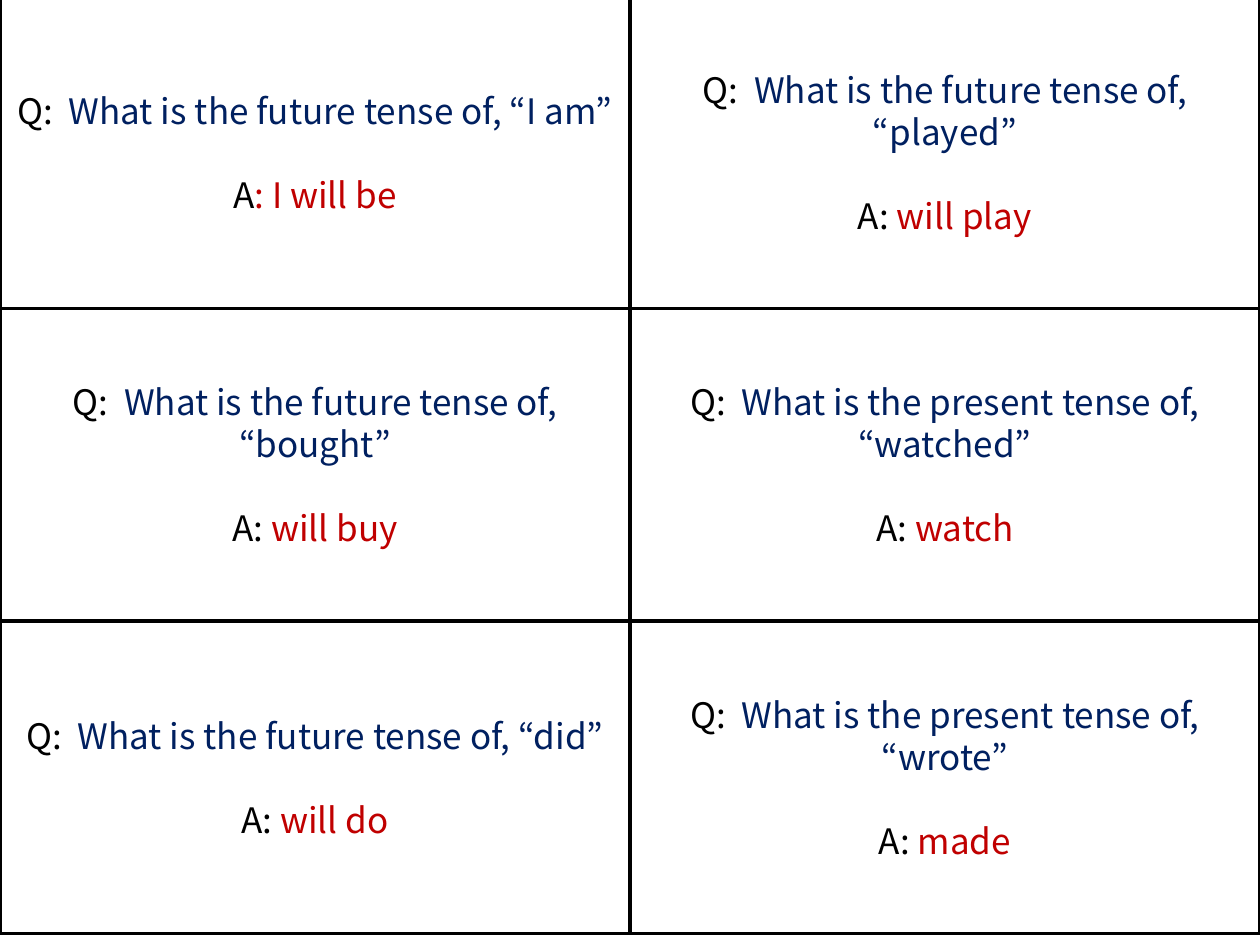
from pptx import Presentation
from pptx.dml.color import RGBColor
from pptx.enum.shapes import MSO_SHAPE
from pptx.enum.text import MSO_ANCHOR, MSO_AUTO_SIZE, PP_ALIGN
from pptx.util import Inches, Pt

RECT = MSO_SHAPE.RECTANGLE
MIDDLE = MSO_ANCHOR.MIDDLE
NO_FIT = MSO_AUTO_SIZE.NONE
CENTER = PP_ALIGN.CENTER

theme = {
    "font": "Noto Sans CJK KR",
    "size": Pt(20),
    "line": Pt(24),
    "edge": Pt(2),
    "paper": RGBColor.from_string("FFFFFF"),
    "ink": RGBColor.from_string("000000"),
    "ask": RGBColor.from_string("002060"),
    "reply": RGBColor.from_string("C00000"),
}

cards = [
    ("future", "I am", "A", ": I will be"),
    ("future", "played", "A: ", "will play"),
    ("future", "bought", "A: ", "will buy"),
    ("present", "watched", "A: ", "watch"),
    ("future", "did", "A: ", "will do"),
    ("present", "wrote", "A: ", "made"),
]
wide, high, top = 5, 2.48, -0.03


def add_line(para, label, text, color):
    para.alignment = CENTER
    para.line_spacing = theme["line"]
    para.space_before = para.space_after = Pt(0)
    para.font.name = theme["font"]
    para.font.size = theme["size"]
    for words, tint in ((label, theme["ink"]), (text, color)):
        run = para.add_run()
        run.text = words
        run.font.color.rgb = tint


deck = Presentation()
deck.slide_width = Inches(10)
deck.slide_height = Inches(7.5)
slide = deck.slides.add_slide(deck.slide_layouts[5])

for index, (tense, verb, label, answer) in enumerate(cards):
    row, col = divmod(index, 2)
    place = [Inches(n) for n in (col * wide, top + row * high, wide, high)]
    if index == 0:
        card = slide.shapes.title
        card.left, card.top, card.width, card.height = place
    else:
        card = slide.shapes.add_shape(RECT, *place)
        card.shadow.inherit = False
    card.fill.solid()
    card.fill.fore_color.rgb = theme["paper"]
    card.line.color.rgb = theme["ink"]
    card.line.width = theme["edge"]

    frame = card.text_frame
    frame.word_wrap = True
    frame.auto_size = NO_FIT
    frame.vertical_anchor = MIDDLE
    ask = f"What is the {tense} tense of, “{verb}”"
    add_line(frame.paragraphs[0], "Q:  ", ask, theme["ask"])
    reply = frame.add_paragraph()
    add_line(reply, label, answer, theme["reply"])
    reply.space_before = theme["line"]

deck.save("out.pptx")
